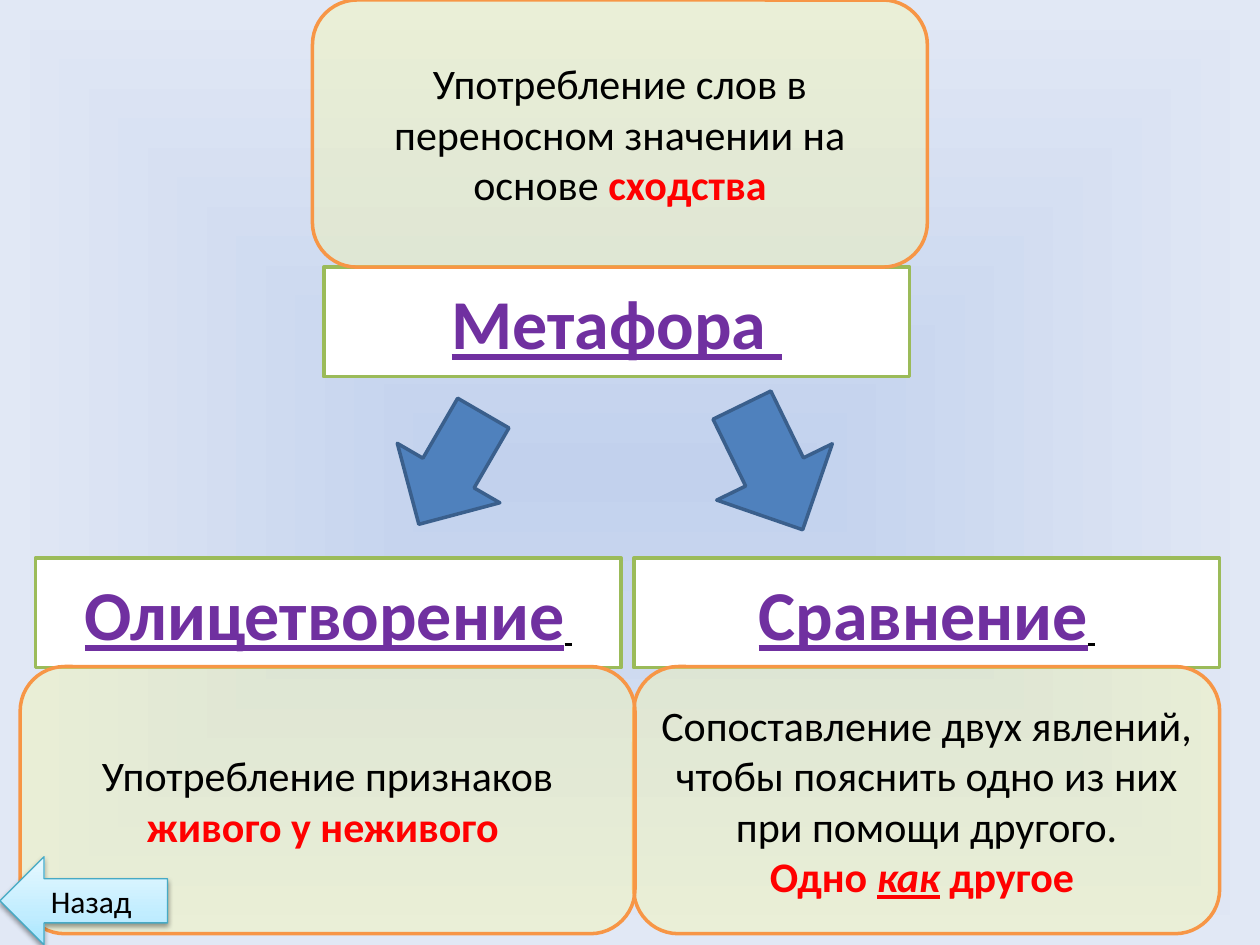
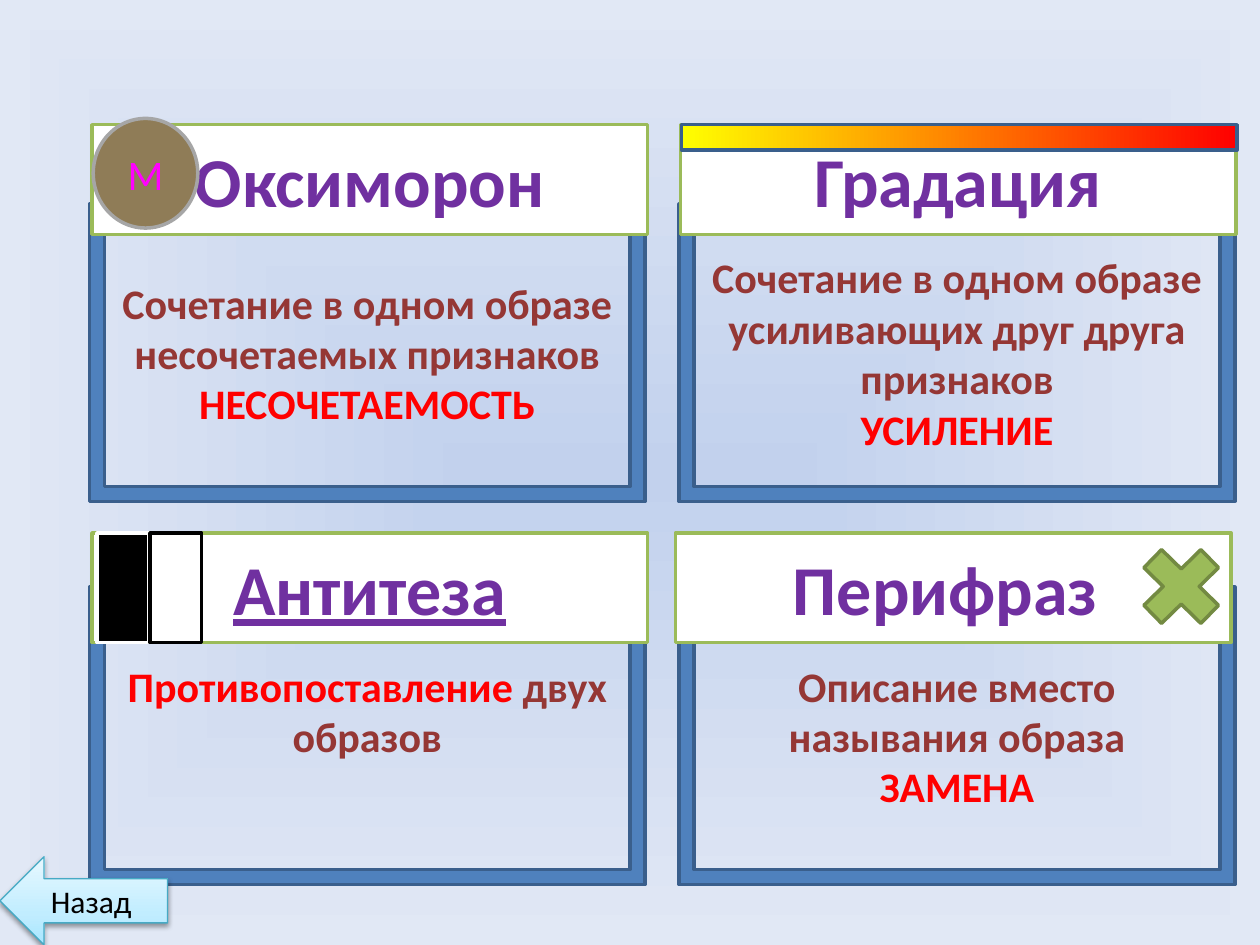
from lxml.etree import SubElement as Sub
from pptx import Presentation
from pptx.dml.color import RGBColor as RGB
from pptx.enum.shapes import MSO_SHAPE as Form
from pptx.enum.text import MSO_ANCHOR as Anchor, PP_ALIGN as Align
from pptx.oxml.ns import qn
from pptx.util import Inches, Pt

HUES = {
    "blue": "4F81BD", "navy": "3A5F8C", "green": "9BBB59", "olive": "738A42",
    "orange": "F79646", "cream": "FFFF99", "purple": "7030A0", "red": "FF0000",
    "brown": "953735", "tan": "8F7C57", "gray": "A6A6A6", "pink": "FF00FF",
    "yellow": "FFFF00", "teal": "46AAC5", "white": "FFFFFF", "black": "000000",
    "core": "C2D1ED", "edge": "E1E8F5",
    "sky": "A7E6FF", "pale": "C1EDFF", "ice": "E7F8FF",
}
FONT = "Calibri"

TITLE = {"size": 40, "hue": "purple", "bold": True}
LINK = {**TITLE, "underline": True}
GAP = {"size": 18, "hue": "black", "underline": True}
PLAIN = {"size": 24, "hue": "black"}
KEY = {"size": 24, "hue": "red", "bold": True}
TERM = {**KEY, "italic": True, "underline": True}
BODY = {**KEY, "hue": "brown"}
SIGN = {"size": 24, "hue": "pink"}
BACK = {"size": 18, "hue": "black"}

ARROWS = [(3.11, 3.21, 0.94, 1.02, 30.1), (5.62, 3.16, 1.02, 1.1, 334)]

TREE = [
    ((2.57, 2.12), [[("Метафора ", LINK)]],
     (2.48, 0, 4.88),
     [[("Употребление слов в переносном значении на основе ", PLAIN),
       ("сходства", KEY)]]),
    ((5.03, 4.43), [[("Сравнение", LINK), (" ", GAP)]],
     (5.03, 5.29, 4.65),
     [[("Сопоставление двух явлений, чтобы пояснить одно из них "
        "при помощи другого.", PLAIN)],
      [("Одно ", KEY), ("как", TERM), (" другое ", KEY)]]),
    ((0.28, 4.43), [[("Олицетворение", LINK), (" ", GAP)]],
     (0.16, 5.29, 4.88),
     [[("Употребление признаков ", PLAIN), ("живого у неживого ", KEY)]]),
]

CARDS = [
    ([[("Оксиморон", TITLE)]], (0.73, 0.99),
     [[("Сочетание в одном образе несочетаемых признаков", BODY)],
      [("НЕСОЧЕТАЕМОСТЬ", KEY)]], 0.05,
     [(Form.OVAL, (0.74, 0.94, 0.83, 0.87), "tan", "gray", [[("М", SIGN)]])]),
    ([[("Градация", TITLE)]], (5.4, 0.99),
     [[("Сочетание в одном образе усиливающих друг друга признаков", BODY)],
      [("УСИЛЕНИЕ", KEY)]], 0.05,
     [(Form.RECTANGLE, (5.41, 0.99, 4.41, 0.2),
       ([(0, "red"), (100, "yellow")], 180), "navy", [])]),
    ([[("Антитеза", LINK)]], (0.73, 4.23),
     [[("Противопоставление", KEY), (" двух образов", BODY)]], 0.45,
     [(Form.RECTANGLE, (0.77, 4.23, 0.41, 0.87), "black", "white", []),
      (Form.RECTANGLE, (1.19, 4.23, 0.41, 0.87), "white", "black", [])]),
    ([[("Перифраз ", TITLE)]], (5.36, 4.23),
     [[("Описание вместо называния образа", BODY)], [("ЗАМЕНА", KEY)]], 0.05,
     [(Form.MATH_MULTIPLY, (8.94, 4.23, 0.87, 0.85), "green", "olive", [])]),
]
COLS, ROWS = (0.71, 5.39), (1.62, 4.66)


def tint(name):
    return RGB.from_string(HUES[name])


def blend(props, stops, angle=None):
    solid = props.find(qn("a:solidFill"))
    grad = props.makeelement(qn("a:gradFill"), {"rotWithShape": "1"})
    props.replace(solid, grad)
    marks = Sub(grad, qn("a:gsLst"))
    for spot, name in stops:
        mark = Sub(marks, qn("a:gs"), pos=str(spot * 1000))
        Sub(mark, qn("a:srgbClr"), val=HUES[name])
    if angle is None:
        way = Sub(grad, qn("a:path"), {"path": "rect"})
        Sub(way, qn("a:fillToRect"), dict.fromkeys("ltrb", "50000"))
    else:
        Sub(grad, qn("a:lin"), ang=str(angle * 60000), scaled="0")


def write(shape, lines):
    frame = shape.text_frame
    frame.word_wrap = True
    frame.vertical_anchor = Anchor.MIDDLE
    for i, line in enumerate(lines):
        para = frame.add_paragraph() if i else frame.paragraphs[0]
        para.alignment = Align.CENTER
        for text, look in line:
            run = para.add_run()
            run.text = text
            run.font.name = FONT
            for key, value in look.items():
                if key == "hue":
                    run.font.color.rgb = tint(value)
                else:
                    setattr(run.font, key, Pt(value) if key == "size" else value)


def draw(slide, form, box, fill, line, lines=(), width=2):
    shape = slide.shapes.add_shape(form, *map(Inches, box))
    shape.shadow.inherit = False
    shape.fill.solid()
    if isinstance(fill, str):
        shape.fill.fore_color.rgb = tint(fill)
    else:
        blend(shape.element.spPr, *fill)
    shape.line.color.rgb = tint(line)
    shape.line.width = Pt(width)
    write(shape, lines)
    return shape


def label(slide, spot, width, lines):
    draw(slide, Form.RECTANGLE, (*spot, width, 0.87), "white", "green", lines)


def start(deck):
    slide = deck.slides.add_slide(deck.slide_layouts[6])
    slide.background.fill.solid()
    blend(slide.element.find(".//" + qn("p:bgPr")),
          [(0, "core"), (100, "edge")])
    return slide


def finish(slide):
    fill = ([(0, "sky"), (35, "pale"), (100, "ice")], 270)
    back = draw(slide, Form.LEFT_ARROW, (0, 6.8, 1.33, 0.7), fill, "teal",
                [[("Назад ", BACK)]], 0.75)
    glow = Sub(back.element.spPr.find(qn("a:effectLst")), qn("a:outerShdw"),
               blurRad=str(Pt(3.1)), dist=str(Pt(1.6)), dir="5400000",
               rotWithShape="0")
    shade = Sub(glow, qn("a:srgbClr"), val=HUES["black"])
    Sub(shade, qn("a:alpha"), val="38000")


def tree(deck):
    slide = start(deck)
    for *box, turn in ARROWS:
        draw(slide, Form.DOWN_ARROW, box, "blue", "navy").rotation = turn
    for spot, name, _, _ in TREE:
        label(slide, spot, 4.65, name)
    for _, _, box, lines in TREE:
        note = draw(slide, Form.ROUNDED_RECTANGLE, (*box, 2.12),
                    "cream", "orange", lines)
        color = note.element.spPr.find(qn("a:solidFill"))[0]
        Sub(color, qn("a:alpha"), val="32000")
    finish(slide)


def cards(deck):
    slide = start(deck)
    for i, (name, spot, lines, pad, signs) in enumerate(CARDS):
        box = (COLS[i % 2], ROWS[i // 2], 4.41, 2.36)
        frame = draw(slide, Form.FRAME, box, "blue", "navy", lines)
        frame.adjustments[0] = 0.05
        frame.text_frame.margin_bottom = Inches(pad)
        label(slide, spot, 4.41, name)
        for sign in signs:
            draw(slide, *sign)
    finish(slide)


def main():
    deck = Presentation()
    deck.slide_width, deck.slide_height = Inches(10), Inches(7.5)
    tree(deck)
    cards(deck)
    deck.save("out.pptx")


if __name__ == "__main__":
    main()
